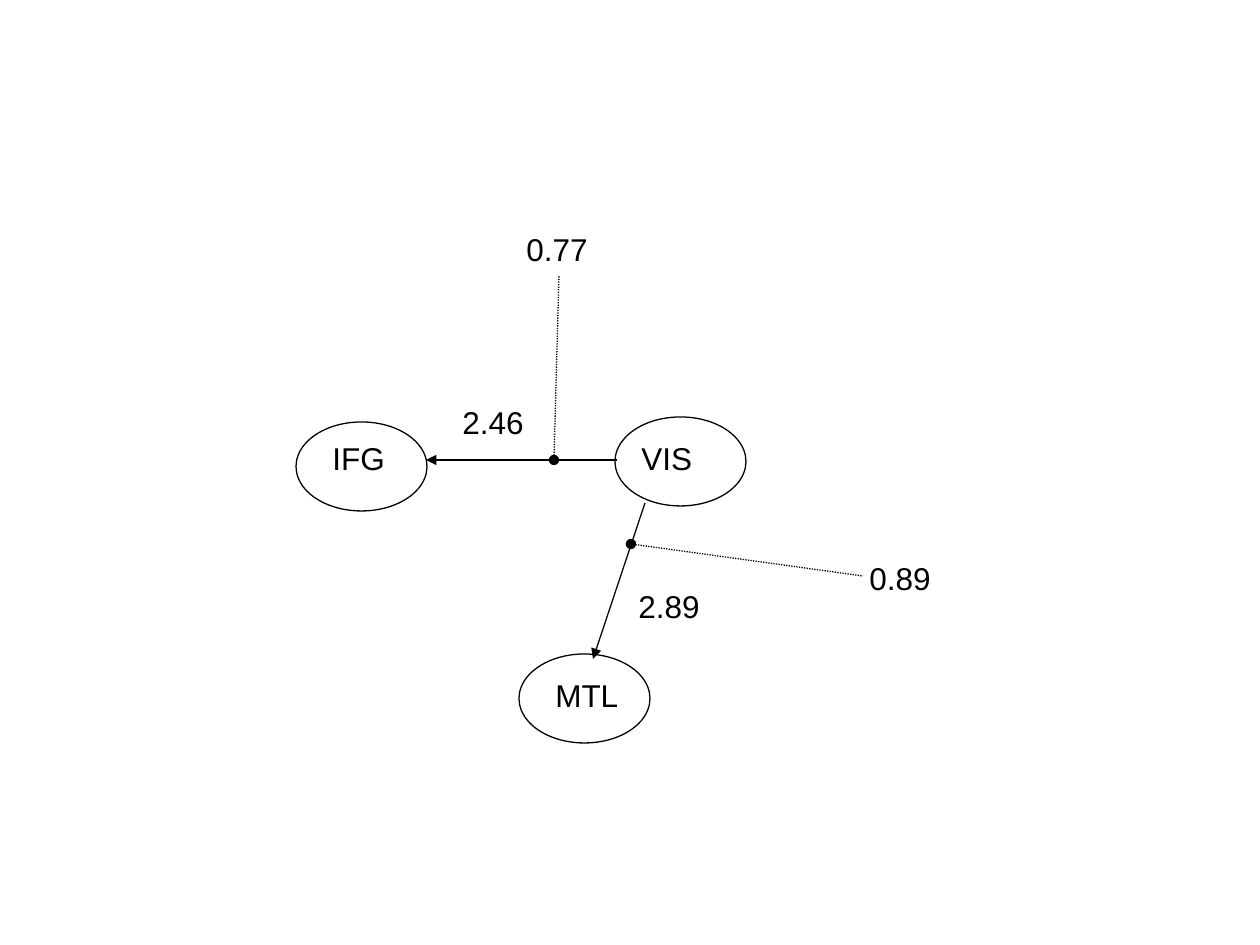
from collections import namedtuple

from lxml.etree import SubElement
from pptx import Presentation
from pptx.dml.color import RGBColor
from pptx.enum.dml import MSO_LINE
from pptx.enum.shapes import MSO_CONNECTOR, MSO_SHAPE
from pptx.enum.text import MSO_AUTO_SIZE
from pptx.oxml.ns import qn
from pptx.util import Emu, Pt

Box = namedtuple("Box", "left top width height")
Theme = namedtuple("Theme", "ink font text_size line_width")

THEME = Theme(RGBColor(0, 0, 0), "Arial", Pt(18), Pt(0.75))
PX = 914400 // 126
SLIDE = Box(0, 0, 1260, 945)
DIAGRAM = Box(296, 224, 648, 520)
REGION_SIZE = (131, 89)
LABEL_HEIGHT = 50

# Places are px from the corner of the diagram
REGIONS = [(319, 193), (0, 198), (223, 430)]
NAMES = [  # text, left, top, width, wraps
    ("MTL", 247, 446, 88, False),
    ("VIS", 333, 209, 76, False),
    ("IFG", 24, 209, 97, True),
]
STRENGTHS = [
    ("2.89", 330, 357, 87, False),
    ("2.46", 154, 173, 87, False),
    ("0.89", 561, 329, 87, False),
    ("0.77", 218, 0, 87, False),
]
PATHWAYS = [((321, 236), (130, 236)), ((349, 279), (297, 435))]
MODULATIONS = [((335, 320), (567, 352)), ((258, 236), (263, 52))]


def px(*lengths):
    return [Emu(length * PX) for length in lengths]


def apply(target, values):
    for name, value in values.items():
        setattr(target, name, value)


def style_line(line):
    line.color.rgb = THEME.ink
    line.width = THEME.line_width


def add_label(shapes, box, text, left, top, width, wraps):
    label = shapes.add_textbox(
        *px(box.left + left, box.top + top, width, LABEL_HEIGHT))
    apply(label.text_frame, {"word_wrap": wraps,
                             "auto_size": MSO_AUTO_SIZE.SHAPE_TO_FIT_TEXT})
    span = label.text_frame.paragraphs[0].add_run()
    span.text = text
    apply(span.font, {"name": THEME.font, "size": THEME.text_size})
    span.font.color.rgb = THEME.ink


def add_region(shapes, box, left, top):
    region = shapes.add_shape(
        MSO_SHAPE.OVAL, *px(box.left + left, box.top + top, *REGION_SIZE))
    region.shadow.inherit = False
    region.fill.background()
    style_line(region.line)


def add_link(shapes, box, start, end, marker, kind, dash=None):
    """Draw a line; marker is headEnd (at start) or tailEnd (at end)."""
    points = [(box.left + x, box.top + y) for x, y in (start, end)]
    link = shapes.add_connector(
        MSO_CONNECTOR.STRAIGHT, *px(*points[0], *points[1]))
    style_line(link.line)
    if dash:
        link.line.dash_style = dash
    properties = link._element.spPr
    SubElement(properties.find(qn("a:ln")), qn(f"a:{marker}"), type=kind)
    SubElement(properties, qn("a:effectLst"))


def add_diagram(page, box):
    shapes = page.shapes.add_group_shape().shapes
    # Brain regions
    for name in NAMES:
        add_label(shapes, box, *name)
    for place in REGIONS:
        add_region(shapes, box, *place)
    # Pathways and the dotted modulations that meet them
    for start, end in PATHWAYS:
        add_link(shapes, box, start, end, "tailEnd", "triangle")
    for start, end in MODULATIONS:
        add_link(shapes, box, start, end, "headEnd", "oval",
                 MSO_LINE.ROUND_DOT)
    # Connection strengths
    for strength in STRENGTHS:
        add_label(shapes, box, *strength)


def main():
    deck = Presentation()
    width, height = px(SLIDE.width, SLIDE.height)
    apply(deck, {"slide_width": width, "slide_height": height})
    page = deck.slides.add_slide(deck.slide_layouts[6])
    add_diagram(page, DIAGRAM)
    deck.save("out.pptx")


if __name__ == "__main__":
    main()
